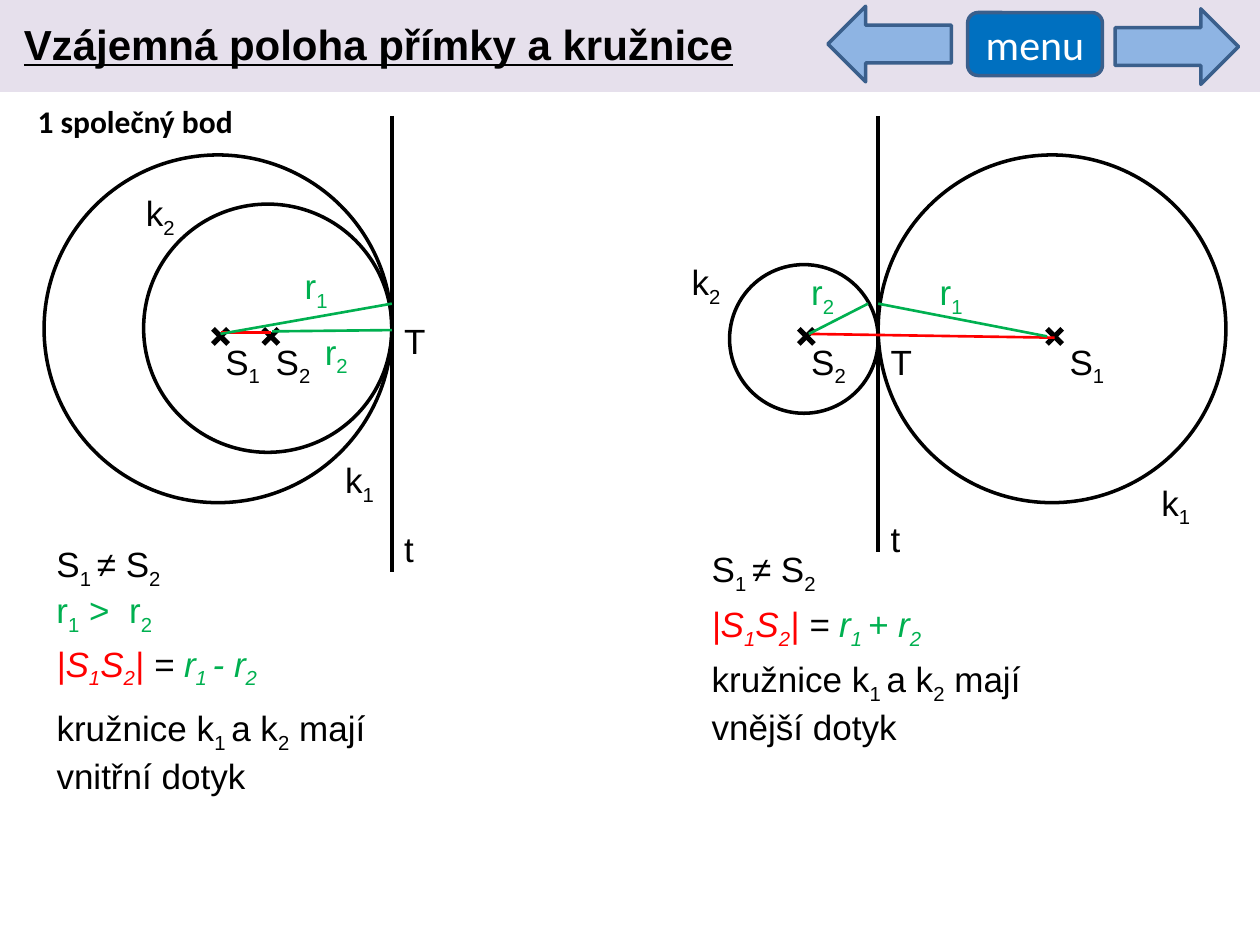
import pptx
import pptx.dml.color
import pptx.enum.shapes
import pptx.enum.text
import pptx.oxml
import pptx.oxml.ns
import pptx.util
from pptx.dml.color import RGBColor
from pptx.util import Inches

BLACK = RGBColor(0x00, 0x00, 0x00)
WHITE = RGBColor(0xFF, 0xFF, 0xFF)
RED = RGBColor(0xFF, 0x00, 0x00)
GREEN = RGBColor(0x00, 0xB0, 0x50)
LAVENDER = RGBColor(0xE6, 0xE0, 0xEC)
SKY = RGBColor(0x8E, 0xB4, 0xE3)
STEEL = RGBColor(0x3A, 0x5F, 0x8C)
BLUE = RGBColor(0x00, 0x70, 0xC0)

SHAPE = pptx.enum.shapes.MSO_SHAPE
ANCHOR = pptx.enum.text.MSO_ANCHOR
ALIGN = pptx.enum.text.PP_ALIGN


def add_text(para, text, size=20, font="Arial", color=BLACK,
             bold=False, italic=False, underline=False):
    """Add text to a paragraph; underscores switch subscript on and off."""
    for index, part in enumerate(text.split("_")):
        if not part:
            continue
        span = para.add_run()
        span.text = part
        span.font.size = pptx.util.Pt(size)
        span.font.name = font
        span.font.color.rgb = color
        span.font.bold = bold
        span.font.italic = italic
        span.font.underline = underline
        if index % 2:
            span._r.get_or_add_rPr().set("baseline", "-25000")


class Drawing:
    """Holds the current page and the style of its elements."""
    outline = 2
    radius_line = 1.5
    tangent_line = 2.25
    mark_line = 3
    mark_size = 0.12

    def __init__(self, page):
        self.page = page

    def shape(self, kind, left, top, width, height, fill=None, line=None):
        item = self.page.shapes.add_shape(
            kind, Inches(left), Inches(top), Inches(width), Inches(height))
        item.shadow.inherit = False
        if fill is None:
            item.fill.background()
        else:
            item.fill.solid()
            item.fill.fore_color.rgb = fill
        if line is None:
            item.line.fill.background()
        else:
            item.line.color.rgb = line
            item.line.width = pptx.util.Pt(self.outline)
        return item

    def circle(self, left, top, diameter):
        self.shape(SHAPE.OVAL, left, top, diameter, diameter, line=BLACK)

    def line(self, start, end, color=BLACK, width=radius_line):
        item = self.page.shapes.add_connector(
            pptx.enum.shapes.MSO_CONNECTOR.STRAIGHT,
            *(Inches(value) for value in (*start, *end)))
        item.line.color.rgb = color
        item.line.width = pptx.util.Pt(width)
        item._element.spPr.append(pptx.oxml.parse_xml(
            "<a:effectLst %s/>" % pptx.oxml.ns.nsdecls("a")))

    def tangent(self, x, bottom):
        self.line((x, 0.92), (x, bottom), width=self.tangent_line)

    def center_mark(self, x, y=2.67):
        half = self.mark_size / 2
        for slope in (-half, half):
            self.line((x - half, y - slope), (x + half, y + slope),
                      width=self.mark_line)

    def box(self, left, top, width, height, grow=True):
        item = self.page.shapes.add_textbox(
            Inches(left), Inches(top), Inches(width), Inches(height))
        frame = item.text_frame
        frame.word_wrap = True
        if grow:
            frame.auto_size = pptx.enum.text.MSO_AUTO_SIZE.SHAPE_TO_FIT_TEXT
        else:
            frame.vertical_anchor = ANCHOR.MIDDLE
        return frame.paragraphs[0]

    def label(self, text, left, top, width=0.7, height=0.44, **style):
        add_text(self.box(left, top, width, height), text, **style)

    def distance(self, left, top, sign):
        """Distance of the centres as a sum or difference of the radii."""
        para = self.box(left, top, 2.2, 0.55, grow=False)
        for text, color in (("|S_1_S_2_| ", RED), ("= ", BLACK),
                            (f"r_1 _{sign} r_2", GREEN)):
            add_text(para, text, color=color, italic=True)


def draw_header(drawing):
    drawing.shape(SHAPE.RECTANGLE, 0, 0, 10, 0.73, fill=LAVENDER)
    for kind, left, top in ((SHAPE.RIGHT_ARROW, 8.85, 0.07),
                            (SHAPE.LEFT_ARROW, 6.57, 0.05)):
        drawing.shape(kind, left, top, 0.98, 0.6, fill=SKY, line=STEEL)
    drawing.label("Vzájemná poloha přímky a kružnice", 0.09, 0.1, 9.32, 0.5,
                  size=24, bold=True, underline=True)
    button = drawing.shape(SHAPE.ROUNDED_RECTANGLE, 7.68, 0.1, 1.07, 0.5,
                           fill=BLUE, line=STEEL)
    button.text_frame.vertical_anchor = ANCHOR.MIDDLE
    para = button.text_frame.paragraphs[0]
    para.alignment = ALIGN.CENTER
    add_text(para, "menu", size=24, font="Calibri", color=WHITE)


def draw_inner_contact(drawing):
    touch = 3.11
    # Circles, centres and tangent
    for top, diameter in ((1.23, 2.76), (1.62, 1.97)):
        drawing.circle(touch - diameter, top, diameter)
    for x in (1.75, 2.15):
        drawing.center_mark(x)
    drawing.tangent(touch, 4.54)
    # Distance of the centres and radii
    drawing.line((2.15, 2.64), (1.75, 2.64), RED)
    drawing.line((touch, 2.41), (1.75, 2.65), GREEN)
    drawing.line((2.16, 2.63), (touch, 2.62), GREEN)
    # Labels
    for text, left, top in (("S_1", 1.69, 2.65), ("S_2", 2.09, 2.65),
                            ("k_1", 2.64, 3.59), ("k_2", 1.06, 1.47),
                            ("T", touch, 2.49), ("t", touch, 4.14)):
        drawing.label(text, left, top)
    drawing.label("r_1", 2.32, 2.05, color=GREEN)
    drawing.label("r_2", 2.48, 2.57, color=GREEN)
    # Conclusions
    drawing.label("S_1 _≠ S_2", 0.35, 4.26, 1.26)
    drawing.label("r_1_ >  r_2", 0.35, 4.62, 1.26, color=GREEN)
    drawing.distance(0.35, 5.01, "-")
    drawing.label("kružnice k_1 _a k_2_ mají vnitřní dotyk",
                  0.35, 5.56, 2.91, 0.77)


def draw_outer_contact(drawing):
    touch = 6.97
    # Circles, centres and tangent
    drawing.circle(touch, 1.23, 2.76)
    drawing.circle(touch - 1.18, 2.1, 1.18)
    for x in (6.4, 8.37):
        drawing.center_mark(x)
    drawing.tangent(touch, 4.38)
    # Distance of the centres and radii
    drawing.line((6.42, 2.65), (8.37, 2.68), RED)
    drawing.line((touch, 2.41), (8.31, 2.67), GREEN)
    drawing.line((6.42, 2.65), (6.89, 2.41), GREEN)
    # Labels
    for text, left, top in (("S_1", 8.39, 2.65), ("S_2", 6.34, 2.65),
                            ("k_1", 9.12, 3.77), ("k_2", 5.39, 2.02),
                            ("T", touch, 2.65), ("t", touch, 4.06)):
        drawing.label(text, left, top)
    drawing.label("r_1", 7.36, 2.1, color=GREEN)
    drawing.label("r_2", 6.34, 2.1, color=GREEN)
    # Conclusions
    drawing.label("S_1 _≠ S_2", 5.55, 4.3, 1.26)
    drawing.distance(5.55, 4.7, "+")
    drawing.label("kružnice k_1 _a k_2_ mají vnější dotyk",
                  5.55, 5.17, 2.91, 0.77)


def main():
    deck = pptx.Presentation()
    deck.slide_width = Inches(10)
    deck.slide_height = Inches(7.5)
    drawing = Drawing(deck.slides.add_slide(deck.slide_layouts[6]))
    drawing.label("1 společný bod", 0.2, 0.76, 3.86, 0.4,
                  size=18, font="Calibri", bold=True)
    draw_inner_contact(drawing)
    draw_outer_contact(drawing)
    draw_header(drawing)
    deck.save("out.pptx")


if __name__ == "__main__":
    main()
